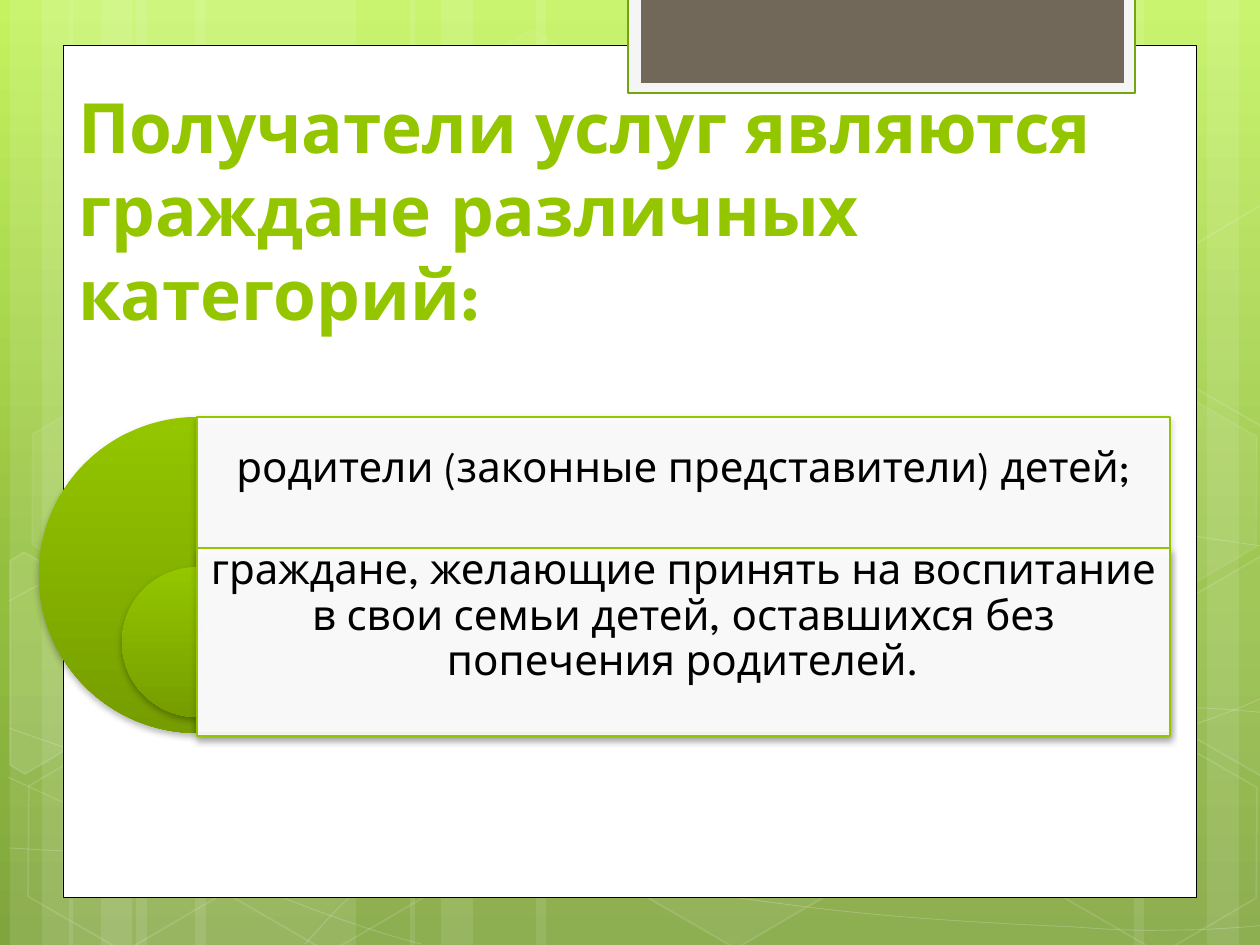
from copy import deepcopy
from dataclasses import dataclass

from lxml import etree
from pptx import Presentation, util as u
from pptx.dml.color import RGBColor
from pptx.enum import shapes as s, text as t
from pptx.oxml.ns import qn

PX = 914400 / 126
WIDTH, HEIGHT = 1260, 945

TITLE = "Получатели услуг являются граждане различных категорий:"
TITLE_BOX = (67, 207, 1094, 206)
# text, top and height of its box, space under it, height of the frame behind it,
# pie (left, top, size)
ITEMS = [
    ("родители (законные представители) детей;", 417, 150, 58, 316, (39, 417, 316)),
    ("граждане, желающие принять на воспитание в свои семьи детей, "
     "оставшихся без попечения родителей.", 548, 188, 63, 188, (122, 567, 150)),
]
ITEM_LEFT, ITEM_WIDTH = 197, 973

BANDS = [  # left, width
    (136, 220), (10, 63), (42, 105), (195, 220), (69, 63), (101, 105),
    (924, 220), (1207, 63), (1134, 105), (536, 388), (410, 63), (441, 105),
]
CURVES = [  # start point, then three points for each cubic segment
    [(9, 848), (77, 852), (145, 856), (239, 854), (334, 853), (451, 850), (577, 838),
     (703, 825), (882, 801), (998, 777), (1113, 753), (1231, 716), (1269, 694)],
    [(9, 601), (45, 581), (82, 562), (152, 543), (224, 524), (326, 496), (437, 488),
     (549, 479), (685, 478), (824, 488), (963, 498), (1193, 537), (1269, 547)],
    [(8, 777), (160, 847), (311, 916), (421, 944)],
    [(9, 728), (48, 742), (88, 756), (161, 776), (234, 795), (344, 827), (450, 848),
     (554, 869), (687, 892), (791, 905), (896, 919), (1008, 924), (1075, 927),
     (1140, 932), (1158, 930), (1191, 930), (1223, 929), (1246, 927), (1269, 925)],
    [(305, 944), (328, 919), (350, 893), (381, 871), (411, 848), (454, 823), (489, 805),
     (524, 788), (546, 780), (592, 767), (638, 754), (722, 737), (766, 728),
     (811, 720), (818, 720), (857, 717), (896, 713), (958, 709), (1000, 708),
     (1045, 707), (1116, 708), (1201, 708), (1223, 709), (1245, 711), (1268, 713)],
]
HEXAGON_SIZE = (220, 192)
HEXAGONS = [  # left, top, fill opacity, line opacity
    (421, 45, 4, 8), (626, 742, 6, 12), (14, 745, 0, 12), (18, 393, 7, 8),
    (219, 746, 0, 12), (949, 571, 10, 12), (1051, 747, 0, 12), (1051, 396, 7, 8),
]
CUT_HEXAGONS = [  # fill opacity, corners
    (10, [(10, 561), (24, 552), (121, 607), (120, 718), (25, 774), (10, 765)]),
    (4, [(1167, 611), (1261, 556), (1271, 562), (1271, 772), (1263, 777), (1167, 722)]),
    (0, [(1167, 261), (1261, 205), (1273, 212), (1271, 422), (1263, 427), (1167, 372)]),
]


@dataclass(frozen=True)
class Theme:
    font: str = "League Spartan"
    title_size: float = 39.6
    item_size: int = 24
    white: str = "FFFFFF"
    black: str = "000000"
    green: str = "94C600"
    tab_fill: str = "F5F5F5"
    tab_line: str = "74A510"
    tab_core: str = "71685A"
    pie: tuple = ((0, "94C600"), (100, "769D00"))
    background: tuple = ((0, "C3F35F"), (62, "93BF3F"), (100, "81A53E"))


THEME = Theme()


def px(value):
    return u.Emu(round(value * PX))


def set_opacity(parent, percent):
    if percent < 100:
        color = parent.find(qn("a:solidFill")).find(qn("a:srgbClr"))
        etree.SubElement(color, qn("a:alpha"), val=str(percent * 1000))


def paint(shape, fill=None, fill_opacity=100, line=None, line_width=1, line_opacity=100):
    shape.shadow.inherit = False
    properties = shape.element.spPr
    if fill and fill_opacity:
        shape.fill.solid()
        shape.fill.fore_color.rgb = RGBColor.from_string(fill)
        set_opacity(properties, fill_opacity)
    else:
        shape.fill.background()
    if line:
        shape.line.color.rgb = RGBColor.from_string(line)
        shape.line.width = u.Pt(line_width)
        set_opacity(properties.find(qn("a:ln")), line_opacity)
    else:
        shape.line.fill.background()
    return shape


def paint_gradient(fill, owner, stops):
    """Fill from top to bottom with any number of (percent, colour) stops."""
    fill.gradient()
    fill.gradient_angle = 270
    stop_list = next(owner.iter(qn("a:gsLst")))
    while len(stop_list) < len(stops):
        stop_list.append(deepcopy(stop_list[0]))
    for stop, (percent, color) in zip(fill.gradient_stops, stops):
        stop.position = percent / 100
        stop.color.rgb = RGBColor.from_string(color)


def add_shadow(shape):
    effects = shape.element.spPr.find(qn("a:effectLst"))
    shadow = etree.SubElement(effects, qn("a:outerShdw"), blurRad=str(u.Pt(4)),
                              dist=str(u.Pt(2)), dir="5400000", rotWithShape="0")
    color = etree.SubElement(shadow, qn("a:srgbClr"), val=THEME.black)
    etree.SubElement(color, qn("a:alpha"), val="28000")


def add_preset(slide, kind, left, top, width, height):
    return slide.shapes.add_shape(kind, px(left), px(top), px(width), px(height))


def add_outline(slide, points, close):
    builder = slide.shapes.build_freeform(*points[0], scale=PX)
    builder.add_line_segments(points[1:], close=close)
    return builder.convert_to_shape()


def bend(shape):
    """Turn every three straight steps of an outline into one cubic segment."""
    steps = list(shape.element.iter(qn("a:lnTo")))
    for first in range(0, len(steps), 3):
        group = steps[first:first + 3]
        segment = etree.Element(qn("a:cubicBezTo"))
        group[0].addprevious(segment)
        for step in group:
            segment.append(step[0])
            step.getparent().remove(step)
    return shape


def write(shape, text, size, color, anchor, spacing, insets, bold=False, align=None):
    frame = shape.text_frame
    frame.word_wrap = True
    frame.auto_size = t.MSO_AUTO_SIZE.NONE
    frame.vertical_anchor = anchor
    frame.margin_left, frame.margin_top, frame.margin_right, frame.margin_bottom = map(px, insets)
    frame.text = text
    paragraph = frame.paragraphs[0]
    paragraph.alignment = align
    paragraph.line_spacing = spacing
    paragraph.space_before = u.Pt(0)
    font = paragraph.font
    font.name, font.size, font.bold = THEME.font, u.Pt(size), bold
    font.color.rgb = RGBColor.from_string(color)


def add_backdrop(slide):
    paint_gradient(slide.background.fill, slide.element, THEME.background)
    for left, width in BANDS:
        band = add_preset(slide, s.MSO_SHAPE.RECTANGLE, left, 0, width, HEIGHT)
        paint(band, THEME.white, 10)
    for points in CURVES:
        curve = bend(add_outline(slide, points, close=False))
        paint(curve, line=THEME.white, line_width=0.5, line_opacity=20)
    for left, top, fill_opacity, line_opacity in HEXAGONS:
        hexagon = add_preset(slide, s.MSO_SHAPE.HEXAGON, left, top, *HEXAGON_SIZE)
        hexagon.adjustments[0] = 0.285
        hexagon.rotation = 30
        paint(hexagon, THEME.white, fill_opacity, THEME.white, 1, line_opacity)
    for fill_opacity, corners in CUT_HEXAGONS:
        paint(add_outline(slide, corners, close=True),
              THEME.white, fill_opacity, THEME.white, 1, 12)


def add_panel(slide):
    rectangle = s.MSO_SHAPE.RECTANGLE
    paint(add_preset(slide, rectangle, 63, 45, 1134, 853), THEME.white, line=THEME.black, line_width=0.5)
    paint(add_preset(slide, rectangle, 628, -2, 507, 95), THEME.tab_fill, line=THEME.tab_line, line_width=1.25)
    paint(add_preset(slide, rectangle, 641, -2, 483, 85), THEME.tab_core)


def add_title(slide):
    title = slide.shapes.title
    title.left, title.top, title.width, title.height = map(px, TITLE_BOX)
    write(title, TITLE, THEME.title_size, THEME.green, t.MSO_ANCHOR.BOTTOM, 1.0,
          (11, 6, 13, 79), bold=True, align=t.PP_ALIGN.LEFT)
    title.element.getparent().append(title.element)  # in front of the panel


def add_item(slide, text, top, height, space_under, frame_height, pie_place):
    left, pie_top, size = pie_place
    pie = paint(add_preset(slide, s.MSO_SHAPE.PIE, left, pie_top, size, size))
    pie.adjustments[0], pie.adjustments[1] = 54, 162
    paint_gradient(pie.fill, pie.element, THEME.pie)
    add_shadow(pie)
    frame = add_preset(slide, s.MSO_SHAPE.RECTANGLE, ITEM_LEFT, top, ITEM_WIDTH, frame_height)
    add_shadow(paint(frame, THEME.white, 90, THEME.green, 0.75))
    label = slide.shapes.add_textbox(px(ITEM_LEFT), px(top), px(ITEM_WIDTH), px(height))
    write(label, text, THEME.item_size, THEME.black, t.MSO_ANCHOR.MIDDLE, 0.9,
          (12, 12, 12, space_under), align=t.PP_ALIGN.CENTER)


def main():
    presentation = Presentation()
    presentation.slide_width, presentation.slide_height = px(WIDTH), px(HEIGHT)
    slide = presentation.slides.add_slide(presentation.slide_layouts[5])
    add_backdrop(slide)
    add_panel(slide)
    add_title(slide)
    for item in ITEMS:
        add_item(slide, *item)
    presentation.save("out.pptx")


if __name__ == "__main__":
    main()
